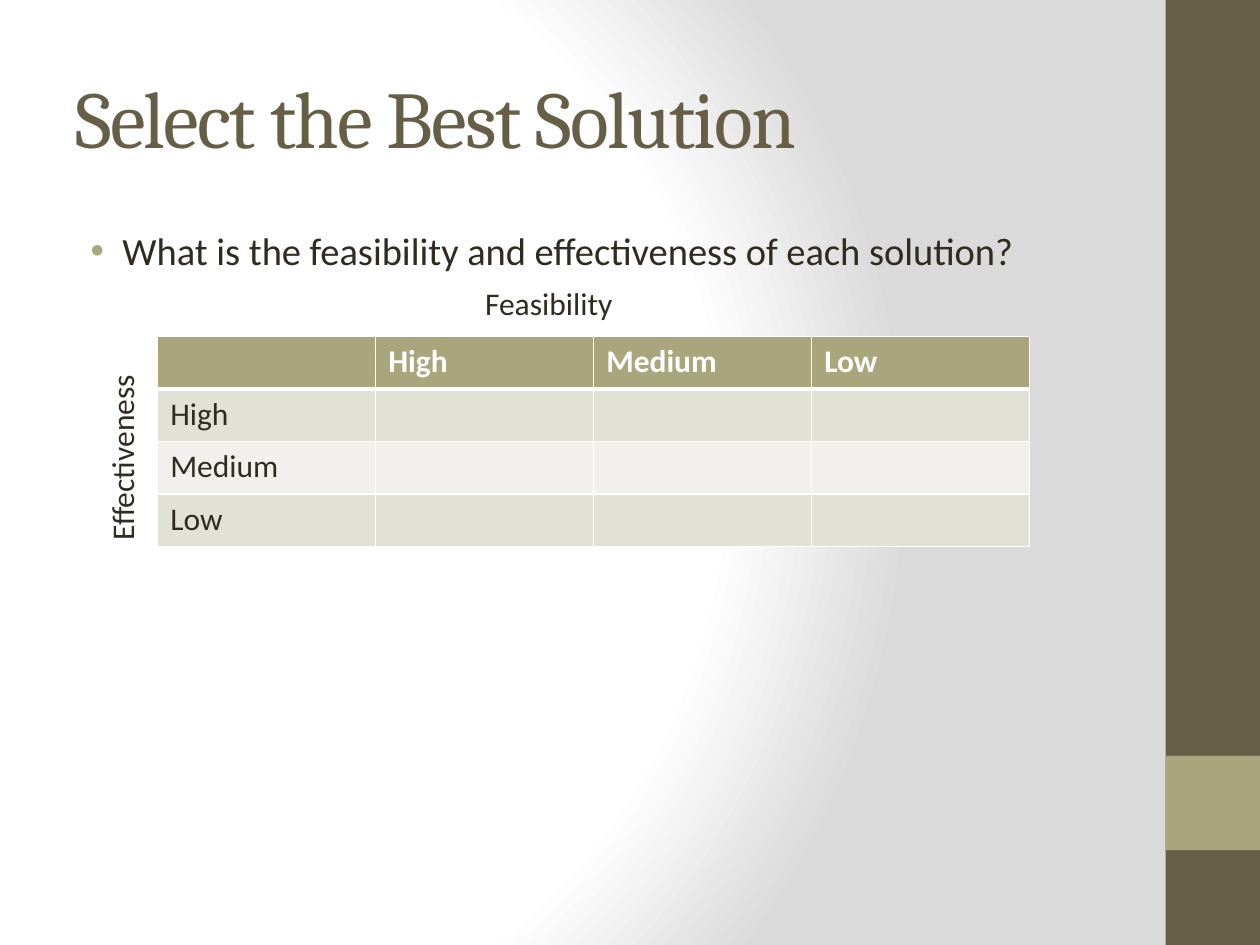
from lxml import etree
from pptx import Presentation
from pptx.dml.color import RGBColor
from pptx.enum.shapes import MSO_SHAPE
from pptx.enum.text import MSO_ANCHOR
from pptx.oxml.ns import qn
from pptx.util import Cm, Pt

RECT = MSO_SHAPE.RECTANGLE
TOP, MIDDLE = MSO_ANCHOR.TOP, MSO_ANCHOR.MIDDLE
HUES = {"white": "FFFFFF", "gray": "DADADA", "brown": "675E47", "olive": "A9A57C",
        "ink": "2F2B20", "band": "E2E1D7", "pale": "F1F0EC"}
LEVELS = ["High", "Medium", "Low"]


def hue(name):
    """Return the named colour."""
    return RGBColor.from_string(HUES[name])


def node(parent, tag, **attrs):
    """Append a drawing element to its parent."""
    return etree.SubElement(parent, qn("a:" + tag), attrs)


def tint(parent, name):
    """Append a colour element."""
    node(parent, "srgbClr", val=HUES[name])


def write(para, text, size, color="ink", face="Calibri", bold=False):
    """Add one styled run to a paragraph."""
    run = para.add_run()
    run.text = text
    font = run.font
    font.size, font.name, font.bold = Pt(size), face, bold
    font.color.rgb = hue(color)
    return run


def label(slide, box, text, size, anchor=TOP, turn=0, **style):
    """Place a wrapped line of text and return its shape and run."""
    shape = slide.shapes.add_textbox(*map(Cm, box))
    shape.rotation = turn
    frame = shape.text_frame
    frame.word_wrap = True
    frame.vertical_anchor = anchor
    return shape, write(frame.paragraphs[0], text, size, **style)


def backdrop(slide):
    """Fill the background with a radial fade."""
    slide.background.fill.gradient()
    grad = slide.element.xpath(".//a:gradFill")[0]
    for child in list(grad):
        grad.remove(child)
    stops = node(grad, "gsLst")
    for pos, name in ((0, "white"), (75, "white"), (100, "gray")):
        tint(node(stops, "gs", pos=str(pos * 1000)), name)
    node(node(grad, "path", path="circle"), "fillToRect",
         l="20000", t="50000", r="100000", b="50000")


def side(slide, box):
    """Draw the side bar with its square accent."""
    left, top, width, height = box
    accent = (left, top + height * 0.8, width, width)
    for part, name in ((box, "brown"), (accent, "olive")):
        shape = slide.shapes.add_shape(RECT, *map(Cm, part))
        shape.shadow.inherit = False
        shape.fill.solid()
        shape.fill.fore_color.rgb = hue(name)
        shape.line.fill.background()


def title(slide, box):
    """Place the slide title."""
    run = label(slide, box, "Select the Best Solution", 46, MIDDLE,
                color="brown", face="Cambria")[1]
    run.font._element.set("spc", "-100")


def body(slide, box):
    """Place the bulleted question."""
    shape = label(slide, box,
                  "What is the feasibility and effectiveness of each solution?", 22)[0]
    props = shape.text_frame.paragraphs[0]._p.get_or_add_pPr()
    props.set("marL", str(Cm(0.95)))
    props.set("indent", str(Cm(-0.64)))
    tint(node(props, "buClr"), "olive")
    node(props, "buFont", typeface="Arial")
    node(props, "buChar", char="•")


def edge(cell, head):
    """Draw the white borders of a cell, heavy where head and body meet."""
    props = cell._tc.get_or_add_tcPr()
    heavy = {0: "lnB", 1: "lnT"}.get(head)
    for spot, tag in enumerate(("lnL", "lnR", "lnT", "lnB")):
        line = etree.Element(qn("a:" + tag), w=str(Pt(3 if tag == heavy else 1)))
        tint(node(line, "solidFill"), "white")
        props.insert(spot, line)


def matrix(slide, box):
    """Build the grid of feasibility against effectiveness."""
    left, top, width, height = box
    count = len(LEVELS) + 1
    table = slide.shapes.add_table(count, count, *map(Cm, box)).table
    for col in table.columns:
        col.width = Cm(width / count)
    for row in table.rows:
        row.height = Cm(height / count)
    names = [""] + LEVELS
    for r in range(count):
        for c in range(count):
            cell = table.cell(r, c)
            cell.fill.solid()
            fill = "olive" if r == 0 else "band" if r % 2 else "pale"
            cell.fill.fore_color.rgb = hue(fill)
            edge(cell, r)
            text = names[c] if r == 0 else names[r] if c == 0 else ""
            if text:
                write(cell.text_frame.paragraphs[0], text, 18,
                      "ink" if r else "white", bold=r == 0)
    label(slide, (left + 6.35, top - 1.17, 11.43, 1.02), "Feasibility", 18)
    label(slide, (left - 4.32, top + 0.25, 7.19, 1.02), "Effectiveness", 18, turn=270)


def main():
    """Build and save the slide."""
    deck = Presentation()
    deck.slide_width, deck.slide_height = Cm(25.4), Cm(19.05)
    slide = deck.slides.add_slide(deck.slide_layouts[6])
    backdrop(slide)
    side(slide, (23.5, 0, 1.9, 19.05))
    title(slide, (1.27, 0.76, 21.16, 3.18))
    body(slide, (1.27, 4.45, 21.16, 13.33))
    matrix(slide, (3.18, 6.78, 17.58, 4.24))
    deck.save("out.pptx")


if __name__ == "__main__":
    main()
